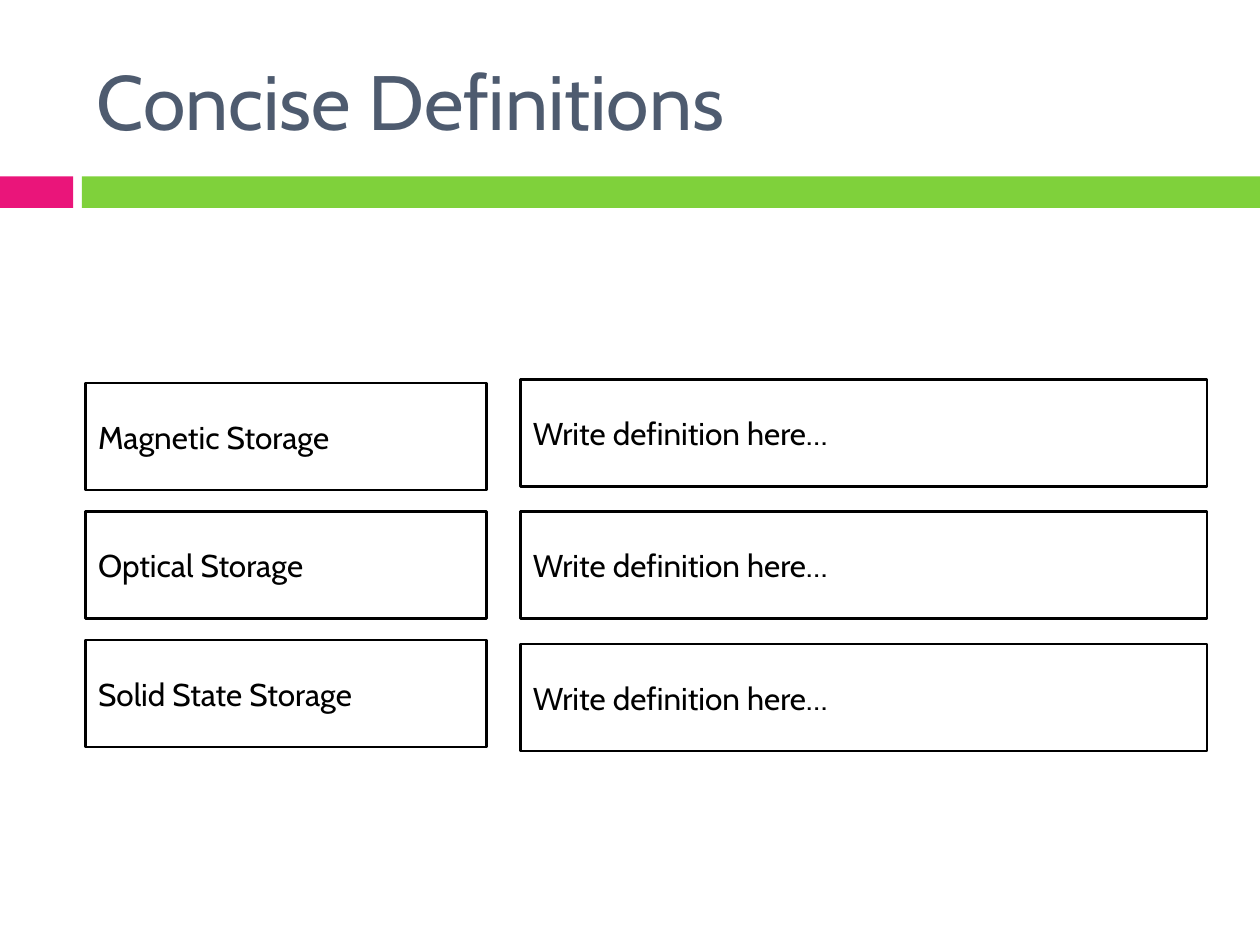
"""Build a slide with three storage terms and boxes for their definitions."""
from pptx import Presentation
from pptx import util as u
from pptx.dml.color import RGBColor
from pptx.enum import shapes, text

TITLE = "Concise Definitions"
PROMPT = "Write definition here…"
TERMS = ["Magnetic Storage", "Optical Storage", "Solid State Storage"]
BANDS = [(0, 0.58, "pink"), (0.65, 9.35, "green")]
COLUMNS = [
    {"texts": TERMS, "left": 0.68, "width": 3.18, "top": 3.04, "step": 1.02},
    {"texts": [PROMPT] * len(TERMS), "left": 4.13, "width": 5.45, "top": 3.01, "step": 1.05},
]
BOX_HEIGHT = 0.85
THEME = {
    "font": "Cabin",
    "title_size": 44,
    "body_size": 18,
    "line_width": 1.5,
    "title": RGBColor.from_string("4E5B6F"),
    "ink": RGBColor.from_string("000000"),
    "pink": RGBColor.from_string("EA157A"),
    "green": RGBColor.from_string("7FD13B"),
}


def write(shape, words, size, color):
    frame = shape.text_frame
    frame.text = words
    frame.word_wrap = True
    frame.vertical_anchor = text.MSO_ANCHOR.MIDDLE
    para = frame.paragraphs[0]
    para.alignment = text.PP_ALIGN.LEFT
    font = para.runs[0].font
    font.name = THEME["font"]
    font.size = u.Pt(THEME[size])
    font.color.rgb = THEME[color]


def add_rectangle(page, left, top, width, height):
    box = page.shapes.add_shape(
        shapes.MSO_SHAPE.RECTANGLE, *map(u.Inches, (left, top, width, height)))
    box.shadow.inherit = False
    return box


def add_band(page, left, width, color):
    band = add_rectangle(page, left, 1.4, width, 0.25)
    band.fill.solid()
    band.fill.fore_color.rgb = THEME[color]
    band.line.fill.background()


def add_column(page, column):
    for row, words in enumerate(column["texts"]):
        top = column["top"] + row * column["step"]
        box = add_rectangle(page, column["left"], top, column["width"], BOX_HEIGHT)
        box.fill.background()
        box.line.color.rgb = THEME["ink"]
        box.line.width = u.Pt(THEME["line_width"])
        write(box, words, "body_size", "ink")


def main():
    deck = Presentation()
    deck.slide_width, deck.slide_height = u.Inches(10), u.Inches(7.5)
    page = deck.slides.add_slide(deck.slide_layouts[6])
    for band in BANDS:
        add_band(page, *band)
    title = page.shapes.add_textbox(*map(u.Inches, (0.67, 0.25, 8.92, 1.08)))
    write(title, TITLE, "title_size", "title")
    for column in COLUMNS:
        add_column(page, column)
    deck.save("out.pptx")


if __name__ == "__main__":
    main()
